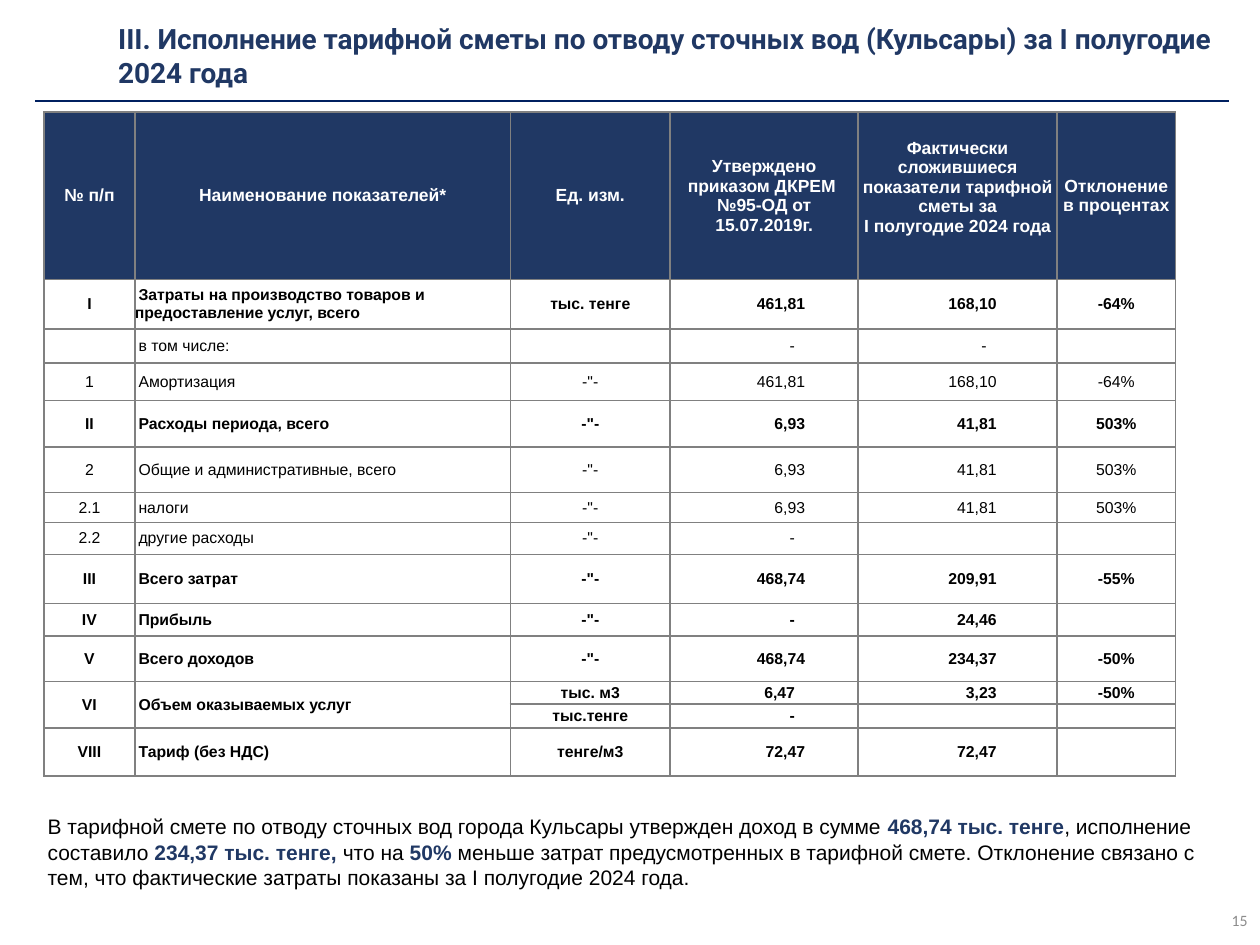
"""Build the tariff estimate slide for wastewater disposal in Kulsary."""
from lxml import etree
from pptx import Presentation
from pptx.dml.color import RGBColor
from pptx.enum.shapes import MSO_CONNECTOR
from pptx.enum.text import MSO_ANCHOR, PP_ALIGN
from pptx.oxml.ns import qn
from pptx.util import Inches, Pt

LEFT, CENTER, RIGHT = PP_ALIGN.LEFT, PP_ALIGN.CENTER, PP_ALIGN.RIGHT
TOP, MIDDLE = MSO_ANCHOR.TOP, MSO_ANCHOR.MIDDLE
STRAIGHT = MSO_CONNECTOR.STRAIGHT
NAVY = RGBColor(0x20, 0x38, 0x64)
RULE = RGBColor(0x00, 0x20, 0x60)
GRAY = RGBColor(0x80, 0x80, 0x80)
PALE = RGBColor(0x8C, 0x8C, 0x8C)
BLACK = RGBColor(0, 0, 0)
WHITE = RGBColor(255, 255, 255)

WIDTHS = [0.72, 2.98, 1.27, 1.49, 1.58, 0.94]
HEIGHTS = [1.33, 0.39, 0.27, 0.3, 0.37, 0.36, 0.24, 0.25, 0.39, 0.26, 0.36, 0.18, 0.19, 0.38]
ALIGNS = [CENTER, LEFT, CENTER, RIGHT, RIGHT, CENTER]
INSETS = {3: 0.42, 4: 0.48}
SHIFTS = {"-": 0.08, "6,47": 0.08}
PLAIN = {2, 3, 5, 6, 7}
ROWS = [
    ["№ п/п", "Наименование показателей*", "Ед. изм.",
     "Утверждено приказом ДКРЕМ \v№95-ОД от 15.07.2019г.",
     "Фактически сложившиеся показатели тарифной сметы за\vI полугодие 2024 года",
     "Отклонение в процентах"],
    ["I", "Затраты на производство товаров и предоставление услуг, всего",
     "тыс. тенге", "461,81", "168,10", "-64%"],
    ["", "в том числе:", "", "-", "-", ""],
    ["1", "Амортизация", '-"-', "461,81", "168,10", "-64%"],
    ["II", "Расходы периода, всего", '-"-', "6,93", "41,81", "503%"],
    ["2", "Общие и административные, всего", '-"-', "6,93", "41,81", "503%"],
    ["2.1", "налоги", '-"-', "6,93", "41,81", "503%"],
    ["2.2", "другие расходы", '-"-', "-", "", ""],
    ["III", "Всего затрат", '-"-', "468,74", "209,91", "-55%"],
    ["IV", "Прибыль", '-"-', "-", "24,46", ""],
    ["V", "Всего доходов", '-"-', "468,74", "234,37", "-50%"],
    ["VI", "Объем оказываемых услуг", "тыс. м3", "6,47", "3,23", "-50%"],
    ["", "", "тыс.тенге", "-", "", ""],
    ["VIII", "Тариф (без НДС)", "тенге/м3", "72,47", "72,47", ""],
]
NOTE = [
    ("В тарифной смете по отводу сточных вод города Кульсары утвержден доход в сумме ", False),
    ("468,74 тыс. тенге", True),
    (", исполнение составило ", False),
    ("234,37 тыс. тенге, ", True),
    ("что на", False),
    (" 50% ", True),
    ("меньше затрат предусмотренных в тарифной смете. Отклонение связано с тем, "
     "что фактические затраты показаны за I полугодие 2024 года.", False),
]


def style(font, color, **form):
    font.color.rgb = color
    for key, val in form.items():
        setattr(font, key, val)


def add_text(slide, place, runs, anchor, align, **form):
    box = slide.shapes.add_textbox(*[Inches(n) for n in place])
    frame = box.text_frame
    frame.word_wrap = True
    frame.vertical_anchor = anchor
    para = frame.paragraphs[0]
    para.alignment = align
    for text, color, bold in runs:
        run = para.add_run()
        run.text = text
        style(run.font, color, bold=bold, **form)


prs = Presentation()
prs.slide_width, prs.slide_height = Inches(10), Inches(7.5)
slide = prs.slides.add_slide(prs.slide_layouts[6])

note = [(text, NAVY if bold else BLACK, bold) for text, bold in NOTE]
add_text(slide, (0.28, 6.41, 9.5, 0.91), note, TOP, LEFT, size=Pt(12), name="Arial")

table = slide.shapes.add_table(len(ROWS), len(WIDTHS), Inches(0.35), Inches(0.89),
                               Inches(sum(WIDTHS)), Inches(sum(HEIGHTS))).table
table.first_row = table.horz_banding = False
for col, width in zip(table.columns, WIDTHS):
    col.width = Inches(width)
for row, height in zip(table.rows, HEIGHTS):
    row.height = Inches(height)

for r, row in enumerate(ROWS):
    head = r == 0
    for c, text in enumerate(row):
        cell = table.cell(r, c)
        inset = 0 if head else INSETS.get(c, 0) + SHIFTS.get(text, 0)
        form = {"text": text, "margin_left": 0, "margin_top": 0,
                "margin_right": Inches(inset),
                "margin_bottom": Inches(0.14 if head and c == 4 else 0),
                "vertical_anchor": MIDDLE}
        for key, val in form.items():
            setattr(cell, key, val)
        props = cell._tc.get_or_add_tcPr()
        for side in ("lnL", "lnR", "lnT", "lnB"):
            edge = etree.SubElement(props, qn(f"a:{side}"), w=str(Pt(1)))
            fill = etree.SubElement(edge, qn("a:solidFill"))
            etree.SubElement(fill, qn("a:srgbClr"), val=str(GRAY))
        if head:
            cell.fill.solid()
            cell.fill.fore_color.rgb = NAVY
        else:
            cell.fill.background()
        para = cell.text_frame.paragraphs[0]
        para.alignment = CENTER if head else ALIGNS[c]
        if c == 1 and not head:
            para._p.get_or_add_pPr().set("indent", str(Inches(0.03)))
        if not text:
            etree.SubElement(para._p, qn("a:endParaRPr"), sz="900")
        for run in para.runs:
            style(run.font, WHITE if head else BLACK, name="Arial",
                  size=Pt(10 if head else 9), bold=r not in PLAIN)

for c in (0, 1):
    table.cell(11, c).merge(table.cell(12, c))

add_text(slide, (7.75, 7.1, 2.25, 0.4), [("15", PALE, False)], MIDDLE, RIGHT,
         size=Pt(9), name="Calibri")
title = "III. Исполнение тарифной сметы по отводу сточных вод (Кульсары) за I полугодие 2024 года"
add_text(slide, (0.84, 0.14, 8.93, 0.6), [(title, NAVY, True)], MIDDLE, LEFT,
         size=Pt(16), name="Roboto")

rule = slide.shapes.add_connector(STRAIGHT, Inches(0.28), Inches(0.8), Inches(9.75), Inches(0.8))
rule.line.color.rgb = RULE
rule.line.width = Pt(1)
etree.SubElement(rule._element.spPr, qn("a:effectLst"))

prs.save("out.pptx")
